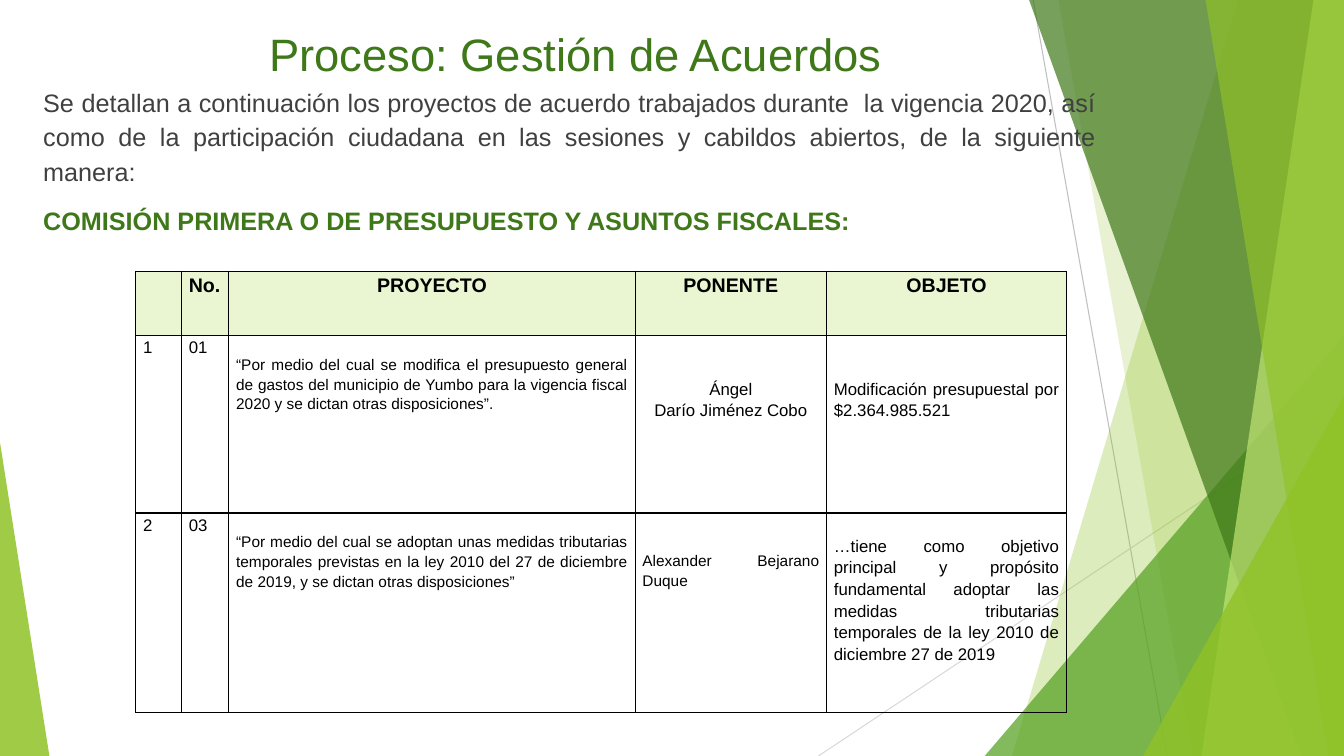
from dataclasses import dataclass

from lxml.etree import SubElement
from pptx import Presentation
from pptx.dml.color import RGBColor
from pptx.enum.shapes import MSO_CONNECTOR, MSO_SHAPE
from pptx.enum.text import MSO_ANCHOR, PP_ALIGN
from pptx.oxml.ns import qn
from pptx.util import Pt

WIDTH, HEIGHT = 960, 540
LIME = RGBColor(0x90, 0xC2, 0x26)
GREEN = RGBColor(0x54, 0xA0, 0x21)
FOREST = RGBColor(0x3F, 0x78, 0x19)
PALE_LIME = RGBColor(0xC0, 0xE4, 0x74)
HEADER_FILL = RGBColor(0xEA, 0xF6, 0xD1)
GRAY = RGBColor(0x40, 0x40, 0x40)
SILVER = RGBColor(0xBF, 0xBF, 0xBF)
LIGHT_SILVER = RGBColor(0xD9, 0xD9, 0xD9)
BLACK = RGBColor(0, 0, 0)


@dataclass
class Ray:
    start: tuple[float, float]
    end: tuple[float, float]
    color: RGBColor


@dataclass
class Band:
    top_x: float
    bottom_x: float
    color: RGBColor
    opacity: int


@dataclass
class Wedge:
    left: float
    top: float
    width: float
    apex: float
    color: RGBColor
    opacity: int


@dataclass
class Entry:
    text: str
    size: float = 12
    top: float = 0
    alignment: PP_ALIGN = PP_ALIGN.JUSTIFY
    color: RGBColor = BLACK
    bold: bool = False


RAYS = [
    Ray((738, 0), (833.8, HEIGHT), SILVER),
    Ray((WIDTH, 290.2), (584.6, HEIGHT), LIGHT_SILVER),
]
DECORATIONS = [
    Band(884.2, 722.9, LIME, 30),
    Band(756, 851.8, LIME, 20),
    Wedge(703.4, 239.8, 256.6, 1, GREEN, 72),
    Band(735.1, 929.5, FOREST, 70),
    Band(938.2, 858.2, PALE_LIME, 70),
    Band(861.1, 949, LIME, 65),
    Wedge(816.5, 283, 143.5, 1, LIME, 80),
    Wedge(0, 316.1, 35.3, 0, LIME, 85),
]
TITLE = Entry("Proceso: Gestión de Acuerdos", 32.4, 0, PP_ALIGN.CENTER, FOREST)
BODY = [
    Entry("Se detallan a continuación los proyectos de acuerdo trabajados durante  la vigencia "
          "2020, así como de la participación ciudadana en las sesiones y cabildos abiertos, "
          "de la siguiente manera:", 18, color=GRAY),
    Entry("COMISIÓN PRIMERA O DE PRESUPUESTO Y ASUNTOS FISCALES:", 18, color=FOREST, bold=True),
]
COLUMN_WIDTHS = [32.7, 33.8, 290.2, 136.8, 171.4]
ROW_HEIGHTS = [46.1, 126.7, 142.6]
HEADINGS = ["", "No.", "PROYECTO", "PONENTE", "OBJETO"]
ROWS = [
    [Entry(heading, 14, 0, PP_ALIGN.JUSTIFY if heading == "No." else PP_ALIGN.CENTER, bold=True)
     for heading in HEADINGS],
    [
        Entry("1"),
        Entry("01"),
        Entry("“Por medio del cual se modifica el presupuesto general de gastos del municipio de "
              "Yumbo para la vigencia fiscal 2020 y se dictan otras disposiciones”.", 11, 13),
        Entry("Ángel\nDarío Jiménez Cobo", 12, 29.5, PP_ALIGN.CENTER),
        Entry("Modificación presupuestal por $2.364.985.521", 12, 29.5),
    ],
    [
        Entry("2"),
        Entry("03"),
        Entry("“Por medio del cual se adoptan unas medidas tributarias temporales previstas en la "
              "ley 2010 del 27 de diciembre de 2019, y se dictan otras disposiciones”", 11, 13),
        Entry("Alexander Bejarano Duque", 11, 26.5),
        Entry("…tiene como objetivo principal y propósito fundamental adoptar las medidas "
              "tributarias temporales de la ley 2010 de diciembre 27 de 2019", 12, 15),
    ],
]


def apply(target, values: dict) -> None:
    for name, value in values.items():
        setattr(target, name, value)


def draw_ray(slide, ray: Ray) -> None:
    points = [Pt(length) for length in (*ray.start, *ray.end)]
    connector = slide.shapes.add_connector(MSO_CONNECTOR.STRAIGHT, *points)
    connector.line.color.rgb = ray.color
    connector.line.width = Pt(0.75)
    SubElement(connector.element.spPr, qn("a:effectLst"))


def draw_decoration(slide, decoration: Band | Wedge) -> None:
    if isinstance(decoration, Band):
        builder = slide.shapes.build_freeform(Pt(decoration.top_x), 0)
        corners = [(WIDTH, 0), (WIDTH, HEIGHT), (decoration.bottom_x, HEIGHT)]
        builder.add_line_segments([(Pt(x), Pt(y)) for x, y in corners], close=True)
        shape = builder.convert_to_shape()
    else:
        shape = slide.shapes.add_shape(
            MSO_SHAPE.ISOSCELES_TRIANGLE, Pt(decoration.left), Pt(decoration.top),
            Pt(decoration.width), Pt(HEIGHT - decoration.top))
        shape.adjustments[0] = decoration.apex
    shape.shadow.inherit = False
    shape.line.fill.background()
    shape.fill.solid()
    shape.fill.fore_color.rgb = decoration.color
    color = shape.element.spPr.find(qn("a:solidFill"))[0]
    SubElement(color, qn("a:alpha"), val=str(decoration.opacity * 1000))


def write_paragraph(paragraph, entry: Entry, text: str, format_values: dict) -> None:
    apply(paragraph, {"alignment": entry.alignment, **format_values})
    run = paragraph.add_run()
    run.text = text
    apply(run.font, {"name": "Arial", "size": Pt(entry.size), "bold": entry.bold})
    run.font.color.rgb = entry.color


def draw_text(slide, box: tuple, entries: list[Entry], frame_values: dict,
              format_values: dict) -> None:
    frame = slide.shapes.add_textbox(*[Pt(length) for length in box]).text_frame
    apply(frame, {"word_wrap": True, "vertical_anchor": MSO_ANCHOR.TOP, **frame_values})
    for index, entry in enumerate(entries):
        paragraph = frame.add_paragraph() if index else frame.paragraphs[0]
        write_paragraph(paragraph, entry, entry.text, format_values)


def draw_borders(cell) -> None:
    properties = cell._tc.get_or_add_tcPr()
    for index, side in enumerate(("lnL", "lnR", "lnT", "lnB")):
        line = properties.makeelement(qn(f"a:{side}"), {"w": str(Pt(1))})
        fill = SubElement(line, qn("a:solidFill"))
        SubElement(fill, qn("a:srgbClr"), val=str(BLACK))
        properties.insert(index, line)


def fill_cell(cell, entry: Entry, is_header: bool) -> None:
    apply(cell, {"margin_left": Pt(5.2), "margin_right": Pt(5.2), "margin_top": Pt(entry.top),
                 "margin_bottom": Pt(0), "vertical_anchor": MSO_ANCHOR.TOP})
    if is_header:
        cell.fill.solid()
        cell.fill.fore_color.rgb = HEADER_FILL
    else:
        cell.fill.background()
    draw_borders(cell)
    if entry.text:
        for index, text in enumerate(entry.text.split("\n")):
            frame = cell.text_frame
            paragraph = frame.add_paragraph() if index else frame.paragraphs[0]
            write_paragraph(paragraph, entry, text, {"line_spacing": 1.15})


def draw_table(slide) -> None:
    table = slide.shapes.add_table(
        len(ROWS), len(COLUMN_WIDTHS), Pt(97), Pt(193.7),
        Pt(sum(COLUMN_WIDTHS)), Pt(sum(ROW_HEIGHTS))).table
    apply(table, {"first_row": False, "horz_banding": False})
    for column, width in zip(table.columns, COLUMN_WIDTHS):
        column.width = Pt(width)
    for row_index, (row, height) in enumerate(zip(table.rows, ROW_HEIGHTS)):
        row.height = Pt(height)
        for cell, entry in zip(row.cells, ROWS[row_index]):
            fill_cell(cell, entry, row_index == 0)


def main() -> None:
    presentation = Presentation()
    apply(presentation, {"slide_width": Pt(WIDTH), "slide_height": Pt(HEIGHT)})
    slide = presentation.slides.add_slide(presentation.slide_layouts[6])
    for ray in RAYS:
        draw_ray(slide, ray)
    for decoration in DECORATIONS:
        draw_decoration(slide, decoration)
    draw_text(slide, (53.3, 10.8, 715.7, 38.9), [TITLE],
              {"margin_top": Pt(7.7), "margin_bottom": Pt(0)}, {})
    draw_text(slide, (23.8, 55.4, 766.1, 460.1), BODY, {},
              {"line_spacing": 1.15, "space_before": Pt(10)})
    draw_table(slide)
    presentation.save("out.pptx")


if __name__ == "__main__":
    main()
